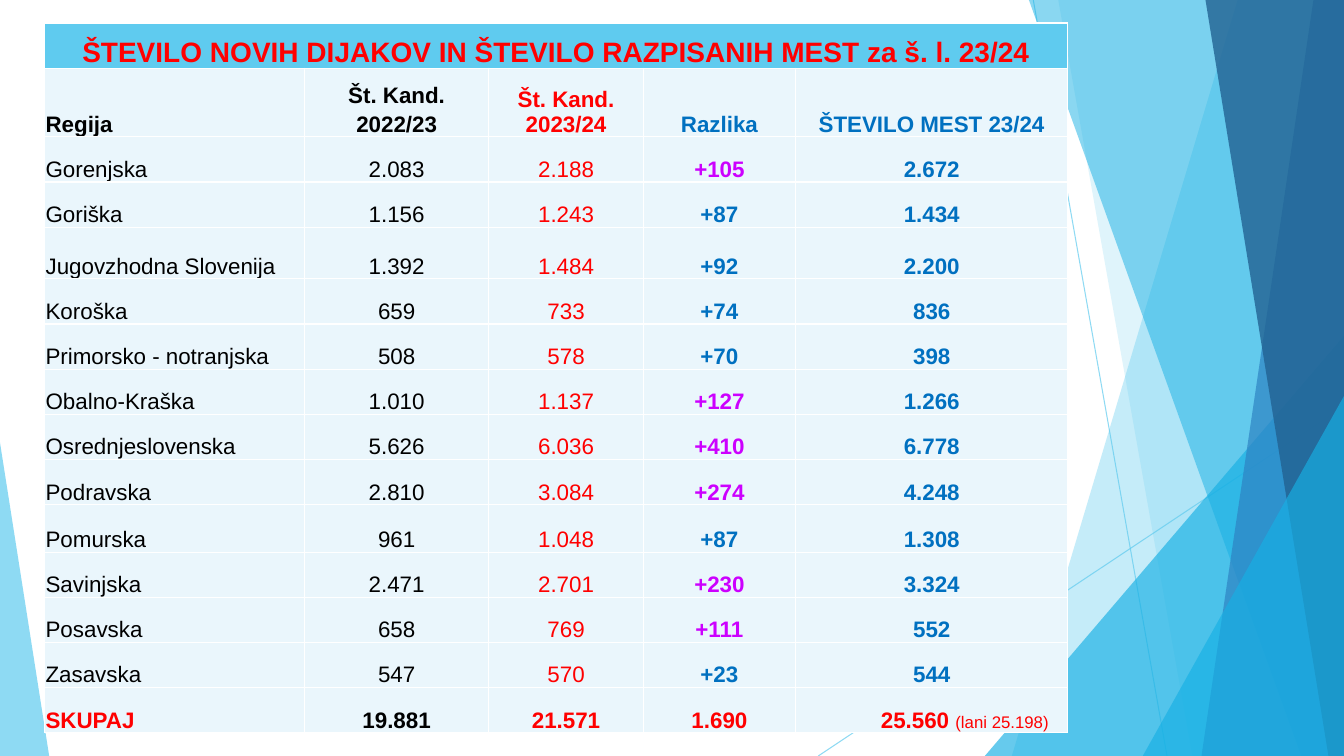
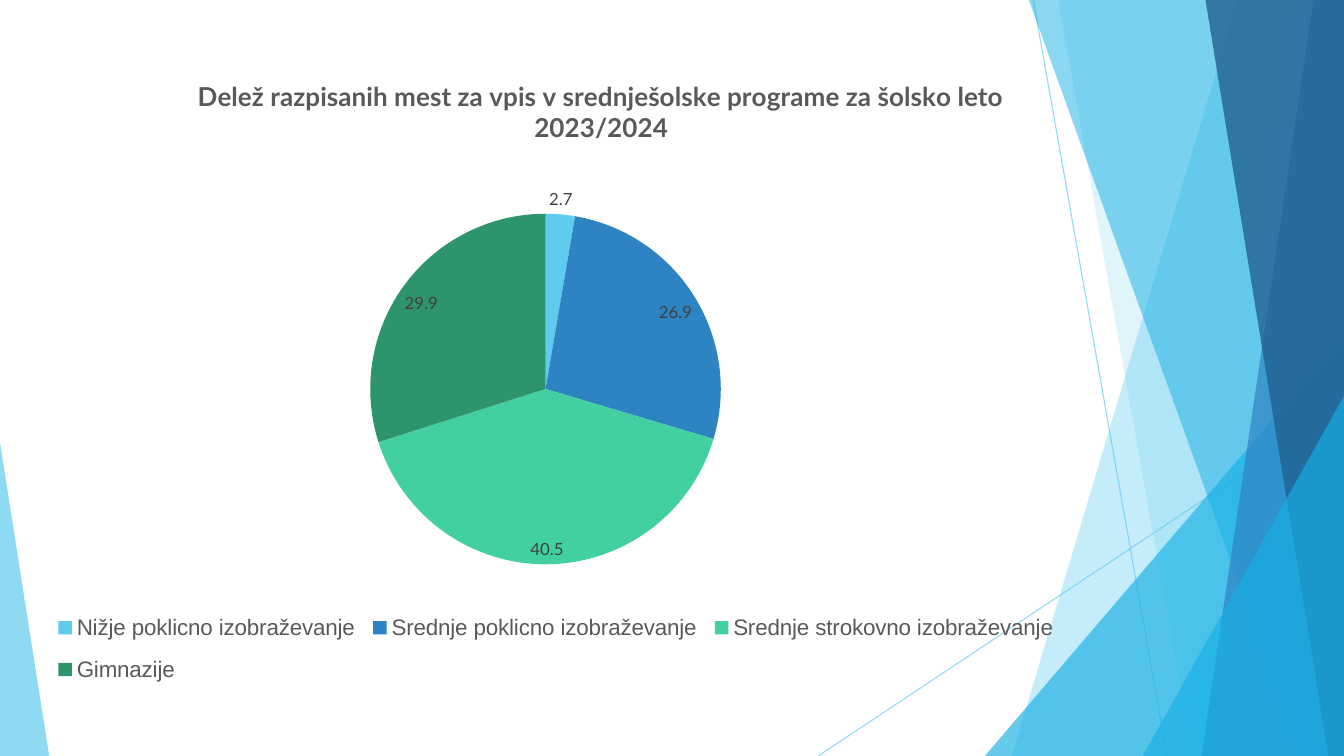
from lxml import etree
from pptx import Presentation
from pptx.chart.data import CategoryChartData
from pptx.dml.color import RGBColor
from pptx.enum.chart import XL_CHART_TYPE, XL_LABEL_POSITION, XL_LEGEND_POSITION
from pptx.enum.shapes import MSO_CONNECTOR, MSO_SHAPE
from pptx.enum.text import MSO_ANCHOR, PP_ALIGN
from pptx.oxml import parse_xml
from pptx.oxml.ns import nsdecls, qn
from pptx.util import Cm, Pt

W, H = 33.87, 19.05
COLORS = {
    "sky": "5FCBEF", "cyan": "17B0E4", "blue": "2E83C3", "navy": "226292",
    "mint": "42D0A2", "green": "2E946B", "pale": "EAF6FC", "black": "000000",
    "red": "FF0000", "link": "0070C0", "violet": "CC00FF",
    "grey": "595959", "label": "404040",
}
TABLE_FONT, CHART_FONT = "Arial", "Lato"


def rgb(name):
    return RGBColor.from_string(COLORS[name])


def set_alpha(fill_parent, percent):
    """Make the solid fill colour under the element translucent."""
    color = next(fill_parent.iter(qn("a:srgbClr")))
    etree.SubElement(color, qn("a:alpha")).set("val", str(percent * 1000))


def manual_layout(parent, before, inner=False, **box):
    """Place a chart part by fractions of the chart area."""
    for old in parent.findall(qn("c:layout")):
        parent.remove(old)
    target = '<c:layoutTarget val="inner"/>' if inner else ""
    modes = "".join(f'<c:{k}Mode val="edge"/>' for k in ("x", "y"))
    sizes = "".join(f'<c:{k} val="{v}"/>' for k, v in box.items())
    layout = parse_xml(f'<c:layout {nsdecls("c")}><c:manualLayout>'
                       f'{target}{modes}{sizes}</c:manualLayout></c:layout>')
    parent.find(qn(before)).addprevious(layout)


class Deck:
    def __init__(self):
        self.prs = Presentation()
        self.prs.slide_width, self.prs.slide_height = Cm(W), Cm(H)
        self.s = None

    def new_slide(self):
        self.s = self.prs.slides.add_slide(self.prs.slide_layouts[6])
        self.backdrop()

    def backdrop(self):
        self.line(26.04, 0, 29.41, H)
        self.line(W, 10.24, 20.62, H)
        self.band(31.19, 25.5, "sky", 36)
        self.band(26.67, 30.05, "sky", 20)
        self.triangle(24.82, 8.46, 9.05, 1, "cyan", 66)
        self.band(25.93, 32.79, "cyan", 50)
        self.band(33.1, 30.28, "blue", 70)
        self.band(30.38, 33.48, "navy", 80)
        self.triangle(28.8, 9.98, 5.07, 1, "cyan", 66)
        self.triangle(0, 11.15, 1.24, 0, "sky", 70)

    def line(self, x1, y1, x2, y2):
        c = self.s.shapes.add_connector(
            MSO_CONNECTOR.STRAIGHT, Cm(x1), Cm(y1), Cm(x2), Cm(y2))
        c.line.color.rgb = rgb("sky")
        c.line.width = Pt(0.75)
        props = c._element.spPr
        set_alpha(props, 70)
        etree.SubElement(props, qn("a:effectLst"))

    def band(self, top_x, bottom_x, color, alpha):
        """Full-height band from a slanted left edge to the right of the slide."""
        builder = self.s.shapes.build_freeform(Cm(top_x), 0)
        builder.add_line_segments(
            [(Cm(W), 0), (Cm(W), Cm(H)), (Cm(bottom_x), Cm(H))], close=True)
        self.paint(builder.convert_to_shape(), color, alpha)

    def triangle(self, x, y, width, apex, color, alpha):
        """Triangle standing on the bottom edge of the slide."""
        sp = self.s.shapes.add_shape(
            MSO_SHAPE.ISOSCELES_TRIANGLE, Cm(x), Cm(y), Cm(width), Cm(H - y))
        sp.adjustments[0] = apex
        self.paint(sp, color, alpha)

    def paint(self, sp, color, alpha):
        sp.shadow.inherit = False
        sp.fill.solid()
        sp.fill.fore_color.rgb = rgb(color)
        sp.line.fill.background()
        set_alpha(sp._element.spPr, alpha)

    def run(self, p, text, color, size=16, bold=False):
        r = p.add_run()
        r.text = text
        r.font.name, r.font.size, r.font.bold = TABLE_FONT, Pt(size), bold
        r.font.color.rgb = rgb(color)

    def cell(self, cell, text, color, size=16, bold=False, fill="pale",
             align=PP_ALIGN.CENTER):
        cell.fill.solid()
        cell.fill.fore_color.rgb = rgb(fill)
        cell.vertical_anchor = MSO_ANCHOR.BOTTOM
        cell.margin_left = cell.margin_right = cell.margin_top = Cm(0.03)
        cell.margin_bottom = 0
        p = cell.text_frame.paragraphs[0]
        p.alignment = align
        for i, part in enumerate(text.split("\n")):
            if i:
                p.add_line_break()
            self.run(p, part, color, size, bold)
        return p

    def table(self, x, y, widths, heights):
        tbl = self.s.shapes.add_table(
            len(heights), len(widths), Cm(x), Cm(y),
            Cm(sum(widths)), Cm(sum(heights))).table
        tbl.horz_banding = False
        for col, width in zip(tbl.columns, widths):
            col.width = Cm(width)
        for row, height in zip(tbl.rows, heights):
            row.height = Cm(height)
        return tbl

    def pie(self, x, y, width, height, title, points):
        data = CategoryChartData()
        data.categories = [name for name, _, _ in points]
        data.add_series("Series 1", [value for _, value, _ in points])
        chart = self.s.shapes.add_chart(
            XL_CHART_TYPE.PIE, Cm(x), Cm(y), Cm(width), Cm(height), data).chart
        chart.font.name, chart.font.size = CHART_FONT, Pt(10)

        p = chart.chart_title.text_frame.paragraphs[0]
        r = p.add_run()
        r.text = title
        r.font.name, r.font.size, r.font.bold = CHART_FONT, Pt(18.6), True
        r.font.color.rgb = rgb("grey")
        chart.chart_title.include_in_layout = False
        manual_layout(chart.chart_title._element, "c:overlay", x=0.15, y=0.04)

        chart.has_legend = True
        legend = chart.legend
        legend.position = XL_LEGEND_POSITION.BOTTOM
        legend.include_in_layout = False
        legend.font.name, legend.font.size = TABLE_FONT, Pt(16)
        legend.font.color.rgb = rgb("grey")
        manual_layout(legend._element, "c:overlay", x=0.01, y=0.82, w=0.98, h=0.15)

        plot = chart.plots[0]
        plot.vary_by_categories = True
        manual_layout(chart._chartSpace.chart.plotArea, "c:pieChart", inner=True,
                      x=0.02, y=0.25, w=0.94, h=0.52)
        for i, (_, _, color) in enumerate(points):
            fill = plot.series[0].points[i].format.fill
            fill.solid()
            fill.fore_color.rgb = rgb(color)
        plot.has_data_labels = True
        labels = plot.data_labels
        labels.show_value = True
        labels.show_percentage = False
        labels.position = XL_LABEL_POSITION.BEST_FIT
        labels.font.name, labels.font.size = CHART_FONT, Pt(12)
        labels.font.color.rgb = rgb("label")


HEADERS = [("Regija", "black"), ("Št. Kand.\n2022/23", "black"),
           ("Št. Kand.\n2023/24", "red"), ("Razlika", "link"),
           ("ŠTEVILO MEST 23/24", "link")]
REGIONS = [
    ("Gorenjska", "2.083", "2.188", "+105", "2.672"),
    ("Goriška", "1.156", "1.243", "+87", "1.434"),
    ("Jugovzhodna Slovenija", "1.392", "1.484", "+92", "2.200"),
    ("Koroška", "659", "733", "+74", "836"),
    ("Primorsko - notranjska", "508", "578", "+70", "398"),
    ("Obalno-Kraška", "1.010", "1.137", "+127", "1.266"),
    ("Osrednjeslovenska", "5.626", "6.036", "+410", "6.778"),
    ("Podravska", "2.810", "3.084", "+274", "4.248"),
    ("Pomurska", "961", "1.048", "+87", "1.308"),
    ("Savinjska", "2.471", "2.701", "+230", "3.324"),
    ("Posavska", "658", "769", "+111", "552"),
    ("Zasavska", "547", "570", "+23", "544"),
]
TOTALS = ("SKUPAJ", "19.881", "21.571", "1.690", "25.560 ")
PROGRAMMES = [
    ("Nižje poklicno izobraževanje", 2.7, "sky"),
    ("Srednje poklicno izobraževanje", 26.9, "blue"),
    ("Srednje strokovno izobraževanje", 40.5, "mint"),
    ("Gimnazije", 29.9, "green"),
]


def region_slide(deck):
    deck.new_slide()
    heights = [1.14] * (len(REGIONS) + 3)
    heights[1], heights[4], heights[10] = 1.73, 1.3, 1.19
    tbl = deck.table(1.12, 0.58, [6.55, 4.65, 3.89, 3.84, 6.86], heights)
    aligns = [PP_ALIGN.LEFT] + [PP_ALIGN.CENTER] * 4

    tbl.cell(0, 0).merge(tbl.cell(0, 4))
    deck.cell(tbl.cell(0, 0),
              "ŠTEVILO NOVIH DIJAKOV IN ŠTEVILO RAZPISANIH MEST za š. l. 23/24",
              "red", size=20, bold=True, fill="sky")
    for c, (text, color) in enumerate(HEADERS):
        p = deck.cell(tbl.cell(1, c), text, color, bold=True, align=aligns[c])
        if c == 1:
            p.line_spacing = 1.15

    for r, values in enumerate(REGIONS, start=2):
        growth = "violet" if int(values[3]) > 100 else "link"
        colors = ["black", "black", "red", growth, "link"]
        for c, (text, color) in enumerate(zip(values, colors)):
            deck.cell(tbl.cell(r, c), text, color, bold=c > 2, align=aligns[c])

    last = len(heights) - 1
    for c, text in enumerate(TOTALS):
        p = deck.cell(tbl.cell(last, c), text, "black" if c == 1 else "red",
                      bold=True, align=aligns[c])
    p.alignment = PP_ALIGN.RIGHT
    tbl.cell(last, 4).margin_right = Cm(0.48)
    deck.run(p, "(lani 25.198)", "red", size=12)


def share_slide(deck):
    deck.new_slide()
    deck.pie(0.94, 1.14, 26.14, 16.99,
             "Delež razpisanih mest za vpis v srednješolske programe "
             "za šolsko leto 2023/2024", PROGRAMMES)


def main():
    deck = Deck()
    region_slide(deck)
    share_slide(deck)
    deck.prs.save("out.pptx")


if __name__ == "__main__":
    main()
